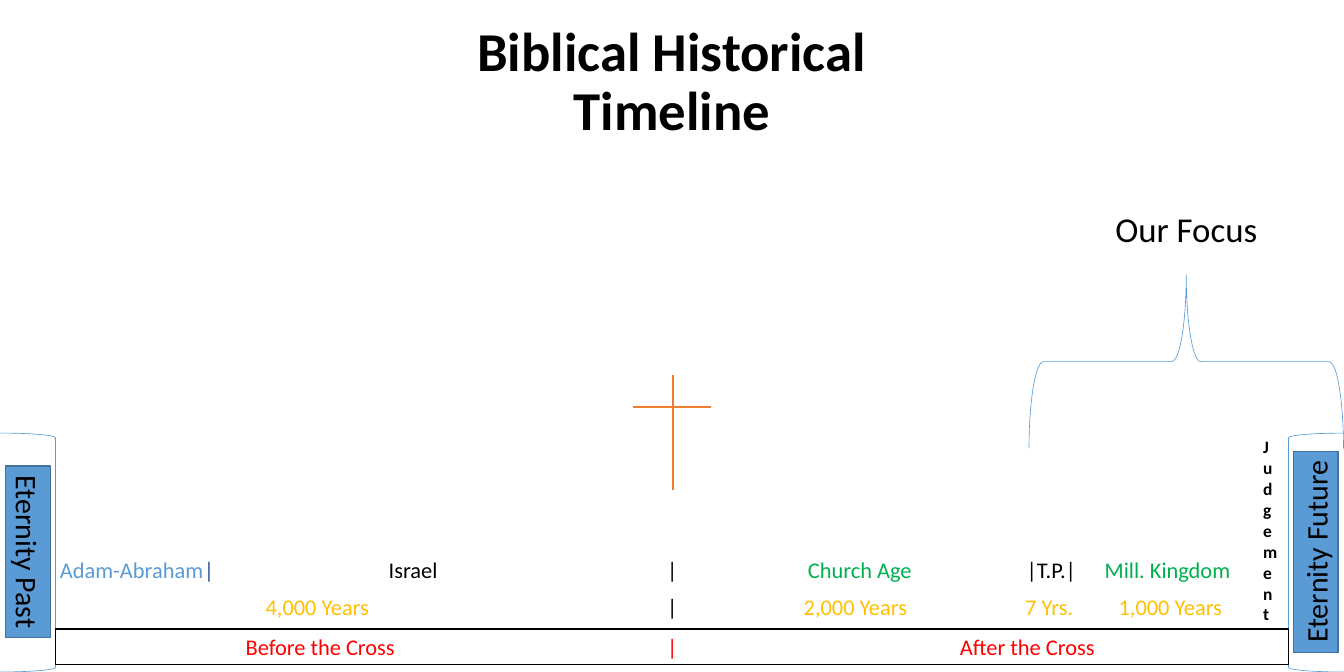
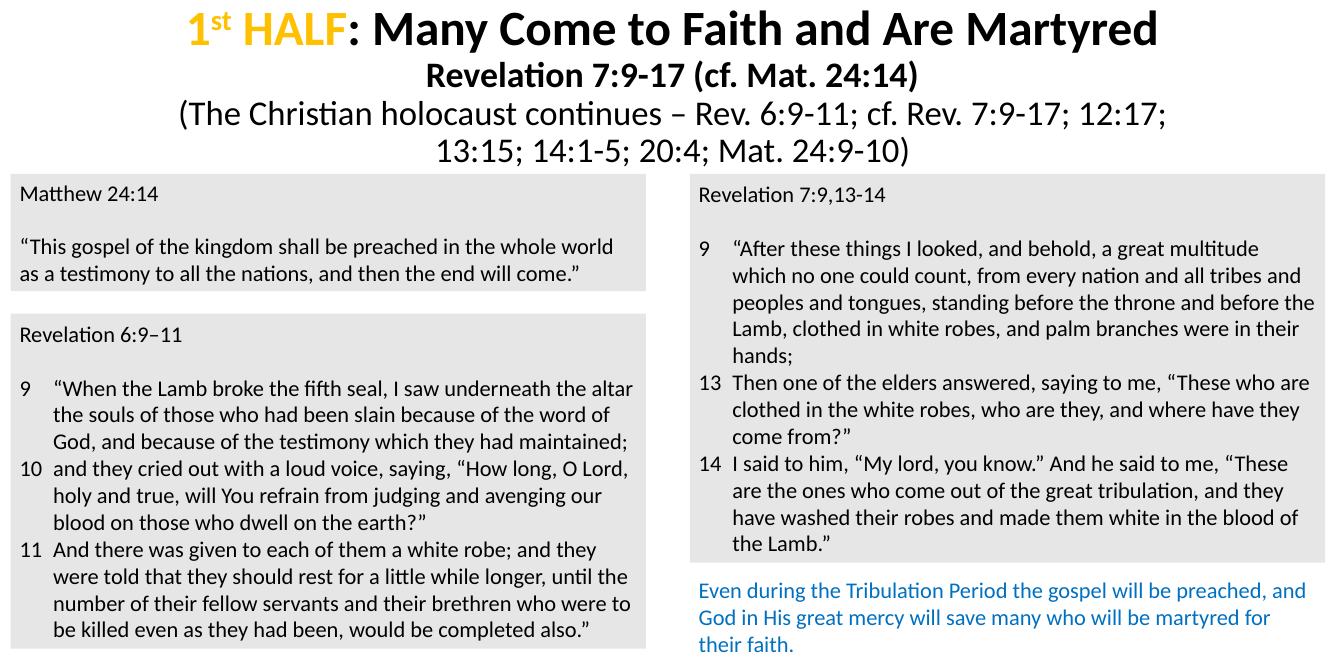
from lxml import etree
from pptx import Presentation
from pptx.dml.color import RGBColor
from pptx.enum.shapes import MSO_CONNECTOR, MSO_SHAPE
from pptx.enum.text import MSO_ANCHOR, MSO_AUTO_SIZE, PP_ALIGN
from pptx.oxml.ns import qn
from pptx.util import Pt

RECT = MSO_SHAPE.RECTANGLE
BRACKET = MSO_SHAPE.RIGHT_BRACKET
BRACE = MSO_SHAPE.RIGHT_BRACE
LINE = MSO_CONNECTOR.STRAIGHT
LEFT, CENTER = PP_ALIGN.LEFT, PP_ALIGN.CENTER
MIDDLE = MSO_ANCHOR.MIDDLE
NO_FIT, GROW = MSO_AUTO_SIZE.NONE, MSO_AUTO_SIZE.SHAPE_TO_FIT_TEXT
FONT = "Calibri"
C = {
    "black": "000000", "white": "FFFFFF", "grey": "E7E6E6", "blue": "5B9BD5",
    "edge": "43739E", "navy": "2F5597", "orange": "ED7D31", "gold": "FFC000",
    "red": "FF0000", "green": "00B050", "note": "0070C0",
}


def add_runs(p, runs, size=18, align=LEFT, bold=False):
    p.alignment = align
    for text, color, *extra in runs:
        if text == "\n":
            p.add_line_break()
            continue
        r = p.add_run()
        r.text = text
        fmt = {"name": FONT, "size": Pt(size), "bold": bold}
        fmt.update(extra[0] if extra else {})
        for key, value in fmt.items():
            setattr(r.font, key, value)
        r.font.color.rgb = RGBColor.from_string(C[color])


def add_box(s, at, kind=None, fill=None, line=None, weight=1, rotation=0, wrap=True):
    frame = [Pt(v) for v in at]
    if kind is None:
        sp = s.shapes.add_textbox(*frame)
    else:
        sp = s.shapes.add_shape(kind, *frame)
        sp.shadow.inherit = False
        sp.rotation = rotation
        if fill:
            sp.fill.solid()
            sp.fill.fore_color.rgb = RGBColor.from_string(C[fill])
        else:
            sp.fill.background()
        if line:
            sp.line.color.rgb = RGBColor.from_string(C[line])
            sp.line.width = Pt(weight)
        else:
            sp.line.fill.background()
    sp.text_frame.word_wrap = wrap
    if kind in (None, RECT):
        sp.text_frame.auto_size = GROW
    return sp


prs = Presentation()
prs.slide_width, prs.slide_height = Pt(1080), Pt(540)

titles = [
    ((304, 16.5, 472, 101), 44, [("Biblical Historical Timeline", "black")]),
    ((111, 3.6, 859, 132), 39.6, [
        ("1", "gold"), ("st", "gold"), (" HALF", "gold"),
        (": Many Come to Faith and Are Martyred", "black"), ("\n", "black"),
        ("Revelation 7:9-17 (cf. Mat. 24:14)", "black", {"size": Pt(28.8)}), ("\n", "black"),
        ("(The Christian holocaust continues – Rev. 6:9-11; cf. Rev. 7:9-17; 12:17; "
         "13:15; 14:1-5; 20:4; Mat. 24:9-10)", "black", {"size": Pt(27.9), "bold": False}),
    ]),
]
slides = []
for at, size, runs in titles:
    s = prs.slides.add_slide(prs.slide_layouts[5])
    sp = s.shapes.title
    for key, value in zip(("left", "top", "width", "height"), at):
        setattr(sp, key, Pt(value))
    tf = sp.text_frame
    for key, value in {"word_wrap": True, "auto_size": NO_FIT, "vertical_anchor": MIDDLE}.items():
        setattr(tf, key, value)
    p = tf.paragraphs[0]
    p.line_spacing = 0.9
    add_runs(p, runs, size, CENTER, True)
    slides.append(s)
timeline, martyrs = slides
p = martyrs.shapes.title.text_frame.paragraphs[0]
p.runs[1].font._element.set("baseline", "30000")

s = timeline
for left, rotation in ((0, 0), (1035.4, 180)):
    add_box(s, (left, 348, 44.6, 192), BRACKET, None, "blue", 0.5, rotation)

eternities = [
    ("Eternity Past", -46.8, 138.2, 90),
    ("Eternity Future", 976.3, 162, 270),
]
for text, left, width, rotation in eternities:
    sp = add_box(s, (left, 425.5, width, 36), RECT, "blue", "edge", 1, rotation, False)
    add_runs(sp.text_frame.paragraphs[0], [(text, "black")], 24, CENTER)

rows = [
    (add_box(s, (44.6, 505.4, 990.7, 28.8), RECT, "white", "black"),
     [("Before the Cross", "red", 205.7), ("|", "red", 488.6), ("After the Cross", "red", 773.9)]),
    (add_box(s, (43.9, 443.5, 961.2, 28.8)),
     [("|", "navy", 116.9), ("|", "black", 489.3)]),
    (add_box(s, (43.9, 473, 990.7, 28.8)),
     [("4,000 Years", "gold", 204), ("|", "black", 489.3), ("2,000 Years", "gold", 636.4),
      ("7 Yrs.", "gold", 792.2), ("1,000 Years", "gold", 889.5)]),
]
for sp, marks in rows:
    p = sp.text_frame.paragraphs[0]
    add_runs(p, [("\t" + text, color) for text, color, stop in marks])
    tabs = etree.SubElement(p._p.get_or_add_pPr(), qn("a:tabLst"))
    for text, color, stop in marks:
        etree.SubElement(tabs, qn("a:tab"), pos=str(Pt(stop)), algn="ctr")

for ends in ((540.7, 301, 540.7, 393.8), (509, 326.9, 571, 326.9)):
    beam = s.shapes.add_connector(LINE, *[Pt(v) for v in ends])
    beam.line.color.rgb = RGBColor.from_string(C["orange"])
    beam.line.width = Pt(1.5)
    etree.SubElement(beam._element.spPr, qn("a:effectLst"))

add_box(s, (883.4, 164.2, 139.7, 252.7), BRACE, None, "blue", 0.5, 270)
sp = add_box(s, (888.5, 163.4, 129.6, 41), RECT, "white", wrap=False)
add_runs(sp.text_frame.paragraphs[0], [("Our Focus", "black")], 28, CENTER)

sp = add_box(s, (1008, 347, 34.6, 188))
sp.text_frame._txBody.bodyPr.set("vert", "wordArtVert")
add_runs(sp.text_frame.paragraphs[0], [("Judgement", "black")], 14, bold=True)

eras = [
    ("Adam-Abraham", "blue", 41, 131),
    ("Israel", "black", 305.3, 54),
    ("Church Age", "green", 642.2, 103),
    ("Mill. Kingdom", "green", 880.6, 121),
    ("|T.P.|", "black", 817.9, 54),
]
for text, color, left, width in eras:
    sp = add_box(s, (left, 443.5, width, 28.8), wrap=False)
    add_runs(sp.text_frame.paragraphs[0], [(text, color)])

s = martyrs
col_1, col_2, col_width = 8.6, 554.4, 510.5
passages = [
    (col_1, 139.7, 94.3, "Matthew 24:14", [
        "“This gospel of the kingdom shall be preached in the whole world as a testimony "
        "to all the nations, and then the end will come.”",
    ]),
    (col_1, 252, 269.3, "Revelation 6:9–11", [
        "9\t“When the Lamb broke the fifth seal, I saw underneath the altar the souls of those "
        "who had been slain because of the word of God, and because of the testimony which "
        "they had maintained;",
        "10\tand they cried out with a loud voice, saying, “How long, O Lord, holy and true, "
        "will You refrain from judging and avenging our blood on those who dwell on the earth?”",
        "11\tAnd there was given to each of them a white robe; and they were told that they "
        "should rest for a little while longer, until the number of their fellow servants and "
        "their brethren who were to be killed even as they had been, would be completed also.”",
    ]),
    (col_2, 139.7, 312.5, "Revelation 7:9,13-14", [
        "9\t“After these things I looked, and behold, a great multitude which no one could "
        "count, from every nation and all tribes and peoples and tongues, standing before the "
        "throne and before the Lamb, clothed in white robes, and palm branches were in their "
        "hands;",
        "13\tThen one of the elders answered, saying to me, “These who are clothed in the white "
        "robes, who are they, and where have they come from?”",
        "14\tI said to him, “My lord, you know.” And he said to me, “These are the ones who come "
        "out of the great tribulation, and they have washed their robes and made them white in "
        "the blood of the Lamb.”",
    ]),
]
for left, top, height, heading, verses in passages:
    sp = add_box(s, (left, top, col_width, height), RECT, "grey")
    tf = sp.text_frame
    p = tf.paragraphs[0]
    p.space_after = Pt(21.6)
    add_runs(p, [(heading, "black")])
    for verse in verses:
        p = tf.add_paragraph()
        add_runs(p, [(verse, "black")])
        if "\t" in verse:
            pPr = p._p.get_or_add_pPr()
            pPr.set("marL", str(Pt(27)))
            pPr.set("indent", str(Pt(-27)))

sp = add_box(s, (col_2, 459.4, col_width, 72.7))
add_runs(sp.text_frame.paragraphs[0], [
    ("Even during the Tribulation Period the gospel will be preached, and God in His great "
     "mercy will save many who will be martyred for their faith.", "note"),
])

prs.save("out.pptx")
